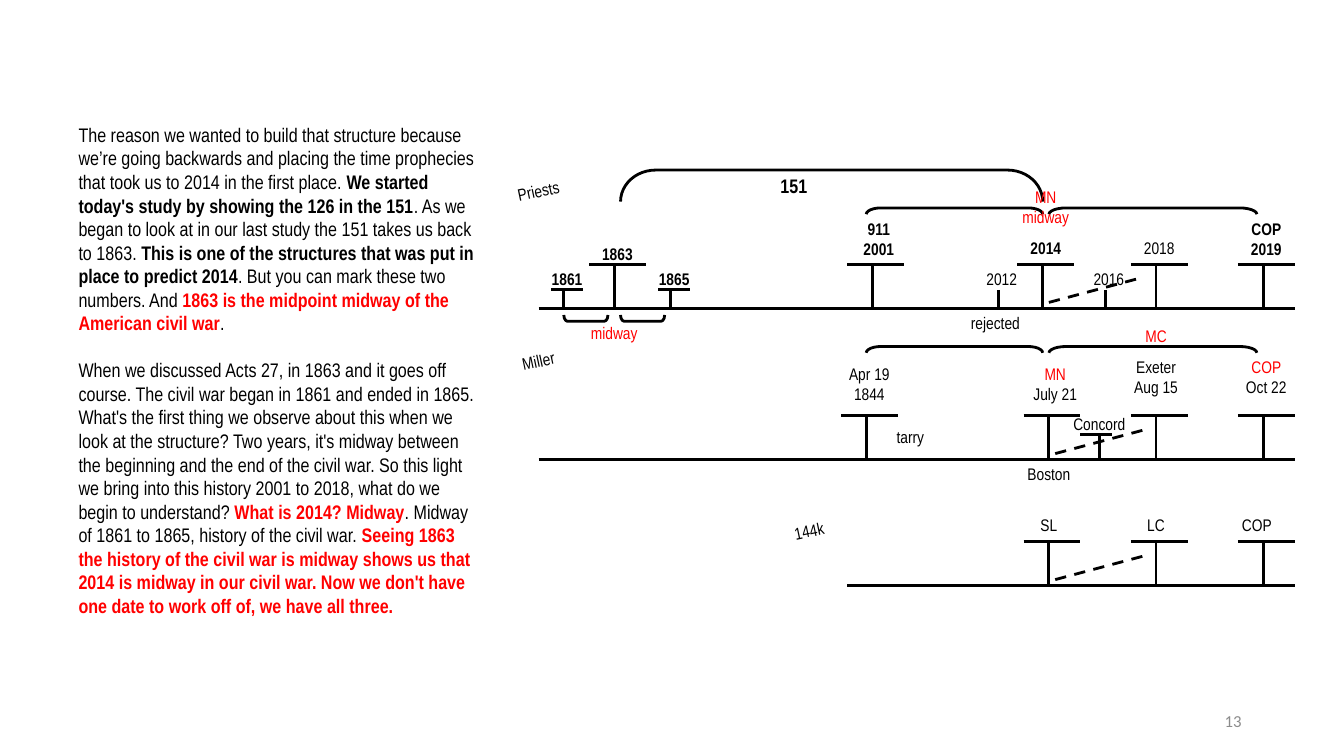
from pptx import Presentation
from pptx.dml.color import RGBColor
from pptx.enum.dml import MSO_LINE
from pptx.enum.shapes import MSO_CONNECTOR, MSO_SHAPE
from pptx.enum.text import MSO_ANCHOR, PP_ALIGN
from pptx.oxml import parse_xml
from pptx.oxml.ns import nsdecls
from pptx.util import Pt

THEME = {
    "line": RGBColor(0, 0, 0),
    "weight": Pt(2),
    "plain": {"name": "Arial Narrow", "color": RGBColor(0, 0, 0), "bold": False},
    "bold": {"name": "Arial Narrow", "color": RGBColor(0, 0, 0), "bold": True},
    "red": {"name": "Arial Narrow", "color": RGBColor(255, 0, 0), "bold": False},
    "red bold": {"name": "Arial Narrow", "color": RGBColor(255, 0, 0), "bold": True},
    "number": {"name": "Calibri", "color": RGBColor(0x8C, 0x8C, 0x8C), "bold": False},
    "label size": Pt(12),
    "body size": Pt(14),
}

prs = Presentation()
prs.slide_width, prs.slide_height = Pt(960), Pt(540)
s = prs.slides.add_slide(prs.slide_layouts[6])


def add_line(x1, y1, x2, y2, dashed=False):
    c = s.shapes.add_connector(MSO_CONNECTOR.STRAIGHT, Pt(x1), Pt(y1), Pt(x2), Pt(y2))
    c.line.color.rgb = THEME["line"]
    c.line.width = THEME["weight"]
    if dashed:
        c.line.dash_style = MSO_LINE.DASH
    c._element.spPr.append(parse_xml(f"<a:effectLst {nsdecls('a')}/>"))


def add_text(x, y, w, h, paragraphs, size, align=PP_ALIGN.CENTER, inset=3, gap=0):
    sp = s.shapes.add_textbox(Pt(x), Pt(y), Pt(w), Pt(h))
    tf = sp.text_frame
    tf.word_wrap = True
    for side in ("left", "right", "top", "bottom"):
        setattr(tf, f"margin_{side}", Pt(inset))
    for i, runs in enumerate(paragraphs):
        p = tf.add_paragraph() if i else tf.paragraphs[0]
        p.alignment = align
        p.space_before = Pt(gap if i else 0)
        for text, style in runs:
            r = p.add_run()
            r.text = text
            r.font.size = size
            for key, value in THEME[style].items():
                if key == "color":
                    r.font.color.rgb = value
                else:
                    setattr(r.font, key, value)
    return sp


# Timelines: start, base height, and the main waymarks on each
END, STEM = 924.75, 31.5
timelines = [
    (384.75, 220.5, [438.75, 623.25, 744.75, 825.75, 902.25]),
    (384.75, 328.5, [618.75, 749.25, 825.75, 902.25]),
    (605.25, 418.5, [749.25, 825.75, 902.25]),
]
for start, base, waymarks in timelines:
    add_line(start, base, END, base)
    for x in waymarks:
        add_line(x, base - STEM, x, base)
        add_line(x - 18, base - STEM, x + 22.5, base - STEM)
    rise = waymarks[-3] + 4.5
    add_line(rise, base - 4.5, rise + 67.5, base - 22.5, dashed=True)

# Minor waymarks: x, base, height, cap reach left and right
for x, base, height, left, right in [
    (402.75, 220.5, 13.5, 9, 13.5),
    (479.25, 220.5, 13.5, 9, 13.5),
    (713.25, 220.5, 13.5, 0, 0),
    (789.75, 220.5, 13.5, 0, 0),
    (785.25, 328.5, 18, 13.5, 9),
]:
    add_line(x, base - height, x, base)
    if left:
        add_line(x - left, base - height, x + right, base - height)

# Brackets: from x, to x, top, depth, rotation
for x1, x2, top, depth, turn in [
    (443.25, 744.75, 121.5, 22.5, 90),
    (618.75, 744.75, 148.5, 4.5, 90),
    (749.25, 897.75, 148.5, 4.5, 90),
    (618.75, 744.75, 247.5, 4.5, 90),
    (749.25, 897.75, 247.5, 4.5, 90),
    (402.75, 434.25, 225, 4.5, 270),
    (443.25, 474.75, 225, 4.5, 270),
]:
    span = x2 - x1
    sp = s.shapes.add_shape(
        MSO_SHAPE.LEFT_BRACKET, Pt((x1 + x2 - depth) / 2), Pt(top + (depth - span) / 2), Pt(depth), Pt(span))
    sp.rotation = turn
    sp.adjustments[0] = span / depth / 12
    sp.shadow.inherit = False
    sp.fill.background()
    sp.line.color.rgb = THEME["line"]
    sp.line.width = THEME["weight"]

# Names of the lines, tilted
for x, y, name in [(357.75, 126, "Priests"), (357.75, 247.5, "Miller"), (551.25, 369, "144k")]:
    add_text(x, y, 54, 22.5, [[(name, "plain")]], THEME["label size"]).rotation = -12

# Labels: box, then one (text, style) pair per paragraph
for x, y, w, h, *rows in [
    # Priests
    (384.75, 189, 40.5, 18, ("1861", "bold")),
    (420.75, 171, 40.5, 18, ("1863", "bold")),
    (461.25, 189, 40.5, 18, ("1865", "bold")),
    (414, 227.5, 49.5, 36, ("midway", "red")),
    (605.25, 153, 45, 36, ("911", "bold"), ("2001", "bold")),
    (695.25, 189, 40.5, 18, ("2012", "plain")),
    (677.25, 220.5, 67.5, 18, ("rejected", "plain")),
    (722.25, 130.5, 49.5, 36, ("MN", "red"), ("midway", "red")),
    (726.75, 166.5, 40.5, 22.5, ("2014", "bold")),
    (771.75, 189, 40.5, 18, ("2016", "plain")),
    (807.75, 166.5, 40.5, 22.5, ("2018", "plain")),
    (884.25, 153, 40.5, 36, ("COP", "bold"), ("2019", "bold")),
    # Miller
    (596.25, 256.5, 49.5, 40.5, ("Apr 19 1844", "plain")),
    (623.25, 301.5, 54, 22.5, ("tarry", "plain")),
    (731.25, 256.5, 45, 40.5, ("MN", "red"), ("July 21", "plain")),
    (722.25, 328.5, 54, 22.5, ("Boston", "plain")),
    (758.25, 292.5, 54, 22.5, ("Concord", "plain")),
    (812.25, 229.5, 27, 22.5, ("MC", "red")),
    (798.75, 252, 54, 45, ("Exeter", "plain"), ("Aug 15", "plain")),
    (884.25, 252, 40.5, 45, ("COP", "red"), ("Oct 22", "plain")),
    # 144k
    (722.25, 364.5, 54, 22.5, ("SL", "plain")),
    (798.75, 364.5, 54, 22.5, ("LC", "plain")),
    (875.25, 364.5, 45, 22.5, ("COP", "plain")),
]:
    add_text(x, y, w, h, [[row] for row in rows], THEME["label size"])
add_text(546.75, 121.5, 40.5, 27, [[("151", "bold")]], THEME["body size"])

# Body text
body = [
    [
        ("The reason we wanted to build that structure because we’re going backwards and placing "
         "the time prophecies that took us to 2014 in the first place. ", "plain"),
        ("We started today's study by showing the 126 in the 151", "bold"),
        (". As we began to look at in our last study the 151 takes us back to 1863. ", "plain"),
        ("This is one of the structures that was put in place to predict 2014", "bold"),
        (". But you can mark these two numbers. And ", "plain"),
        ("1863 is the midpoint midway of the American civil war", "red bold"),
        (".", "plain"),
    ],
    [
        ("When we discussed Acts 27, in 1863 and it goes off course. The civil war began in 1861 "
         "and ended in 1865. What's the first thing we observe about this when we look at the "
         "structure? Two years, it's midway between the beginning and the end of the civil war. "
         "So this light we bring into this history 2001 to 2018, what do we begin to understand? ", "plain"),
        ("What is 2014? Midway", "red bold"),
        (". Midway of 1861 to 1865, history of the civil war. ", "plain"),
        ("Seeing 1863 the history of the civil war is midway shows us that 2014 is midway in our "
         "civil war. Now we don't have one date to work off of, we have all three.", "red bold"),
    ],
]
sp = add_text(49, 84.2, 301, 385.2, body, THEME["body size"], PP_ALIGN.LEFT, 3.6, 16.9)
sp.text_frame.margin_left = sp.text_frame.margin_right = Pt(7.2)

# Slide number
sp = add_text(678, 500.4, 216, 28.8, [[("13", "number")]], THEME["label size"], PP_ALIGN.RIGHT, 7.2)
sp.text_frame.vertical_anchor = MSO_ANCHOR.MIDDLE

prs.save("out.pptx")
